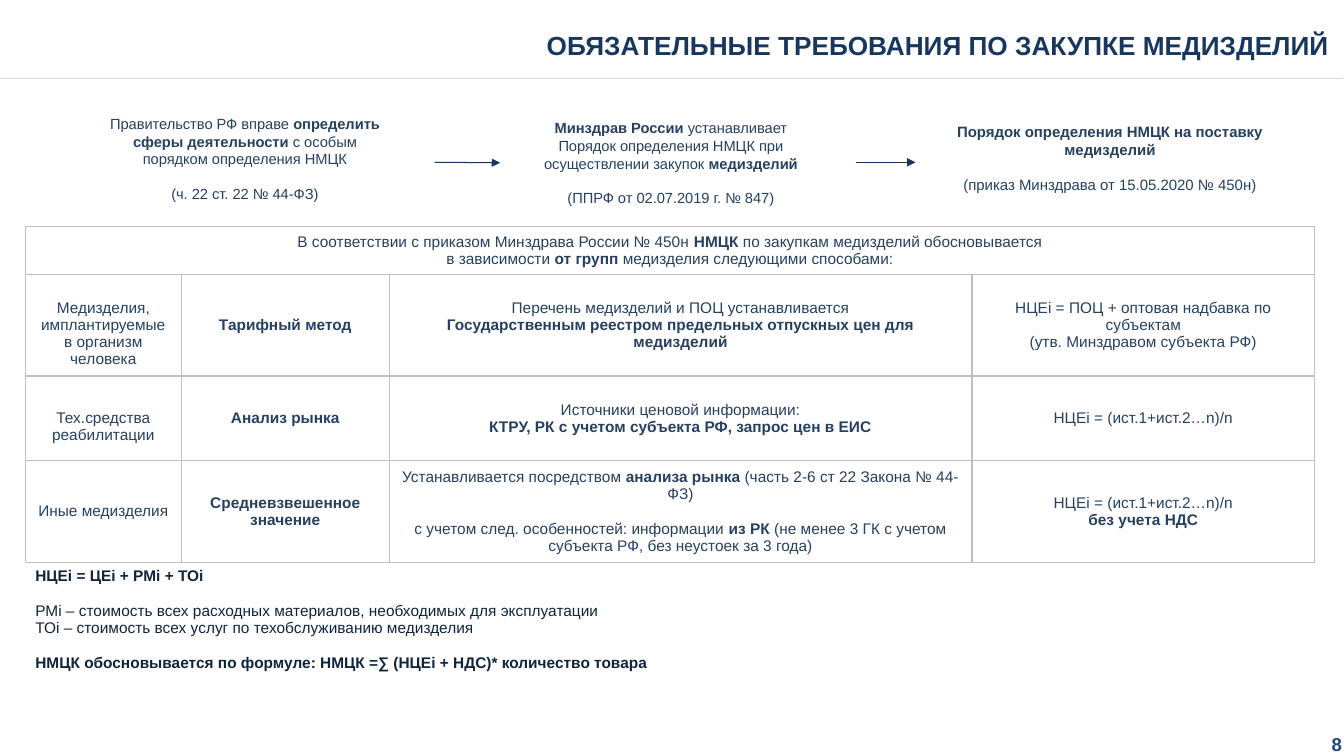
from lxml import etree
from pptx import Presentation
from pptx.dml.color import RGBColor
from pptx.enum.shapes import MSO_CONNECTOR, MSO_SHAPE
from pptx.enum.text import MSO_ANCHOR, MSO_AUTO_SIZE, PP_ALIGN
from pptx.oxml.ns import qn
from pptx.util import Inches, Pt

RECT = MSO_SHAPE.RECTANGLE
LINE = MSO_CONNECTOR.STRAIGHT
TOP, MIDDLE = MSO_ANCHOR.TOP, MSO_ANCHOR.MIDDLE
LEFT, CENTER, RIGHT = PP_ALIGN.LEFT, PP_ALIGN.CENTER, PP_ALIGN.RIGHT
NO_FIT = MSO_AUTO_SIZE.NONE
FONT = "Arial"
NAVY, BLUE, INK, DARK = "17375E", "1F497D", "254061", "0F243E"
WHITE, RULE, GRID = "FFFFFF", "D9D9D9", "BFBFBF"
SIDES = ("a:lnL", "a:lnR", "a:lnT", "a:lnB")

STEPS = [
    ((0.94, 1.08, 2.98, 0.99), 10.5,
     ["Правительство РФ вправе |определить сферы деятельности |с особым порядком определения НМЦК",
      "^(ч. 22 ст. 22 № 44-ФЗ)"]),
    ((4.96, 1.12, 3.39, 0.99), 10.5,
     ["|Минздрав России |устанавливает\nПорядок определения НМЦК при осуществлении закупок |медизделий",
      "^(ППРФ от 02.07.2019 г. № 847)"]),
    ((9.26, 1.16, 3.5, 0.82), 10.7,
     ["|Порядок определения НМЦК на поставку медизделий",
      "^(приказ Минздрава от 15.05.2020 № 450н)"]),
]
COLS = [1.55, 2.06, 5.78, 3.4]
ROWS = [0.47, 1.01, 0.84, 1.01, 1.13, 0.6]
HEAD = ["В соответствии с приказом Минздрава России № 450н |НМЦК| по закупкам медизделий обосновывается\n"
        "в зависимости |от групп |медизделия следующими способами:"]
GROUPS = [
    [["Медизделия,\nимплантируемые\nв организм человека"],
     ["|Тарифный метод"],
     ["Перечень медизделий и ПОЦ устанавливается\n"
      "|Государственным реестром предельных отпускных цен для медизделий"],
     ["НЦЕi = ПОЦ + оптовая надбавка по субъектам\n(утв. Минздравом субъекта РФ)"]],
    [["Тех.средства реабилитации"],
     ["|Анализ рынка"],
     ["Источники ценовой информации:\n|КТРУ, РК с учетом субъекта РФ, запрос цен в ЕИС"],
     ["НЦЕi = (ист.1+ист.2…n)/n"]],
    [["Иные медизделия"],
     ["|Средневзвешенное значение"],
     ["Устанавливается посредством |анализа рынка| (часть 2-6 ст 22 Закона № 44-ФЗ)",
      "^с учетом след. особенностей: информации |из РК| (не менее 3 ГК с учетом субъекта РФ, "
      "без неустоек за 3 года)"],
     ["НЦЕi = (ист.1+ист.2…n)/n", "|без учета НДС"]],
]
NOTES = ["|НЦЕi = ЦЕi + РМi + ТОi",
         "^РМi – стоимость всех расходных материалов, необходимых для эксплуатации\n"
         "ТОi – стоимость всех услуг по техобслуживанию медизделия",
         "^|НМЦК обосновывается по формуле: НМЦК =∑ (НЦЕi + НДС)* количество товара"]


def color(code):
    """Turn a hex string into a colour."""
    return RGBColor.from_string(code)


def write(frame, lines, size, ink, align):
    """Write paragraphs: | toggles bold, a leading ^ leaves a line of space."""
    frame.word_wrap = True
    for i, line in enumerate(lines):
        para = frame.paragraphs[0] if i == 0 else frame.add_paragraph()
        para.alignment = align
        if line.startswith("^"):
            para.space_before = Pt(round(size * 1.15, 1))
        for j, part in enumerate(line.removeprefix("^").split("|")):
            for k, piece in enumerate(part.split("\n")):
                if k:
                    para.add_line_break()
                if piece:
                    run = para.add_run()
                    run.text = piece
                    font = run.font
                    font.name, font.size, font.bold = FONT, Pt(size), j % 2 == 1
                    font.color.rgb = color(ink)


def label(shape, box, text, size, ink):
    """Set a bold right-aligned label in a box without margins."""
    shape.left, shape.top, shape.width, shape.height = map(Inches, box)
    frame = shape.text_frame
    frame.auto_size = NO_FIT
    frame.vertical_anchor = MIDDLE
    frame.margin_left = frame.margin_right = frame.margin_top = frame.margin_bottom = 0
    write(frame, ["|" + text], size, ink, RIGHT)


def stroke(slide, start, end, ink, width, arrow=False):
    """Draw a straight line, with an arrowhead if asked."""
    line = slide.shapes.add_connector(LINE, *map(Inches, start + end))
    line.line.color.rgb = color(ink)
    line.line.width = Pt(width)
    if arrow:
        etree.SubElement(line.line._get_or_add_ln(), qn("a:tailEnd"), type="triangle")
    etree.SubElement(line._element.spPr, qn("a:effectLst"))
    return line


def header(slide, box):
    """Place the title and the rule below it."""
    left, top, width, height = box
    label(slide.shapes.title, (left + 4.04, top + 0.29, 9.14, 0.31),
          "ОБЯЗАТЕЛЬНЫЕ ТРЕБОВАНИЯ ПО ЗАКУПКЕ МЕДИЗДЕЛИЙ", 18.7, NAVY)
    stroke(slide, (left, top + height), (left + width, top + height), RULE, 1)


def step(slide, box, size, lines):
    """Place one step of the chain."""
    shape = slide.shapes.add_shape(RECT, *map(Inches, box))
    shape.shadow.inherit = False
    shape.fill.background()
    shape.line.color.rgb = color(WHITE)
    shape.line.width = Pt(0.75)
    shape.text_frame.vertical_anchor = MIDDLE
    write(shape.text_frame, lines, size, INK, CENTER)
    return shape


def chain(slide):
    """Place the steps and the arrows between them."""
    shapes = [step(slide, *item) for item in STEPS]
    first = stroke(slide, (4.31, 1.61), (4.96, 1.61), NAVY, 0.75, True)
    first.end_connect(shapes[1], 1)
    stroke(slide, (8.49, 1.61), (9.08, 1.61), NAVY, 0.75, True)


def border(cell, shown):
    """Set the cell borders on the shown sides and clear the others."""
    props = cell._tc.get_or_add_tcPr()
    for side in SIDES:
        line = etree.SubElement(props, qn(side), w=str(Pt(1)))
        if side in shown:
            fill = etree.SubElement(line, qn("a:solidFill"))
            etree.SubElement(fill, qn("a:srgbClr"), val=GRID)
        else:
            etree.SubElement(line, qn("a:noFill"))
    cell.fill.background()


def methods(slide, left, top):
    """Place the table of pricing methods."""
    box = map(Inches, (left, top, sum(COLS), sum(ROWS)))
    table = slide.shapes.add_table(len(ROWS), len(COLS), *box).table
    table.first_row = table.horz_banding = False
    for col, width in zip(table.columns, COLS):
        col.width = Inches(width)
    for i, height in enumerate(ROWS):
        table.rows[i].height = Inches(height)
        shown = SIDES if i < 4 else ("a:lnT",) if i == 4 else ()
        for j in range(len(COLS)):
            border(table.cell(i, j), shown)
    for row, last in ((0, 3), (4, 3), (5, 2)):
        table.cell(row, 0).merge(table.cell(row, last))
    for i, group in enumerate(GROUPS, 1):
        for j, lines in enumerate(group):
            cell = table.cell(i, j)
            cell.vertical_anchor = MIDDLE
            write(cell.text_frame, lines, 11, INK, CENTER)
    for i in (1, 2):
        table.cell(i, 0).margin_top = Inches(0.22)
    head, notes = table.cell(0, 0), table.cell(4, 0)
    head.vertical_anchor, notes.vertical_anchor = MIDDLE, TOP
    write(head.text_frame, HEAD, 11, INK, CENTER)
    write(notes.text_frame, NOTES, 11, DARK, LEFT)


def footer(slide, box):
    """Place the page number."""
    label(slide.shapes.add_textbox(*map(Inches, box)), box, "8", 13.3, BLUE)


def main():
    """Build the slide and save it."""
    deck = Presentation()
    deck.slide_width, deck.slide_height = Inches(13.33), Inches(7.5)
    slide = deck.slides.add_slide(deck.slide_layouts[5])
    header(slide, (0, 0, 13.32, 0.78))
    chain(slide)
    methods(slide, 0.25, 2.25)
    footer(slide, (11.01, 7.27, 2.3, 0.22))
    deck.save("out.pptx")


if __name__ == "__main__":
    main()
